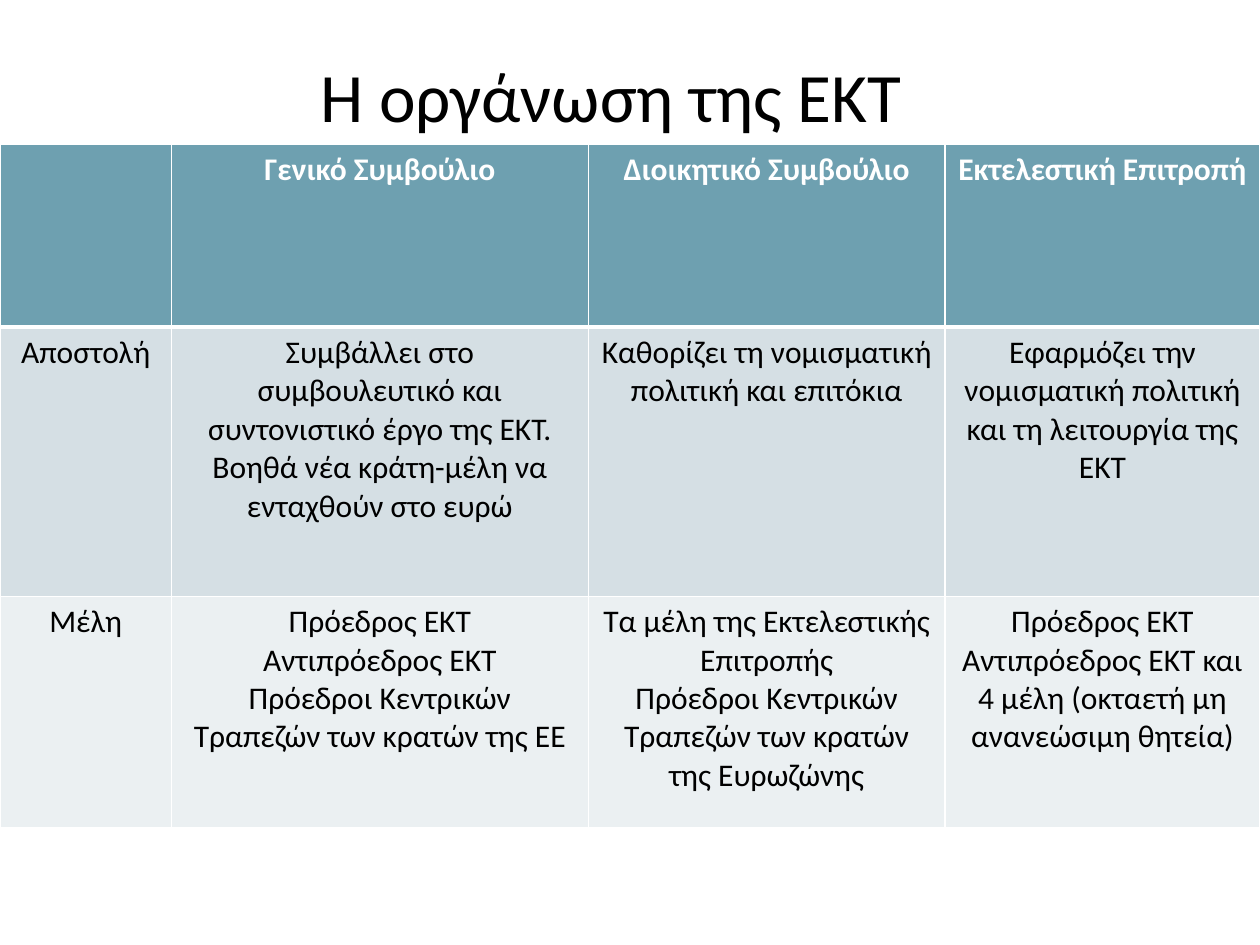
from dataclasses import dataclass
from typing import Any

from lxml import etree
from pptx import Presentation
from pptx.dml.color import RGBColor
from pptx.enum.text import MSO_ANCHOR, PP_ALIGN
from pptx.oxml.ns import qn
from pptx.util import Inches, Pt

CENTER = PP_ALIGN.CENTER
MIDDLE = MSO_ANCHOR.MIDDLE
TOP = MSO_ANCHOR.TOP

COLORS = {
    "ink": "000000",
    "white": "FFFFFF",
    "header": "6EA0B0",
    "mission": "D5DFE4",
    "members": "EBF0F2",
}
FORMATS = {
    "title": {"size": Pt(39.6), "bold": False, "color": "ink"},
    "header": {"size": Pt(18), "bold": True, "color": "white"},
    "body": {"size": Pt(18), "bold": False, "color": "ink"},
}
COLUMN_SHARES = [0.136, 0.331, 0.283, 0.25]
ROW_SHARES = [0.193, 0.285, 0.245]
ROW_FILLS = ["header", "mission", "members"]
THIN, THICK = 1, 3
ROWS = [
    ["", "Γενικό Συμβούλιο", "Διοικητικό Συμβούλιο", "Εκτελεστική Επιτροπή"],
    [
        "Αποστολή",
        "Συμβάλλει στο συμβουλευτικό και συντονιστικό έργο της ΕΚΤ. "
        "Βοηθά νέα κράτη-μέλη να ενταχθούν στο ευρώ",
        "Καθορίζει τη νομισματική πολιτική και επιτόκια",
        "Εφαρμόζει την νομισματική πολιτική και τη λειτουργία της ΕΚΤ",
    ],
    [
        "Μέλη",
        "Πρόεδρος ΕΚΤ\nΑντιπρόεδρος ΕΚΤ\n"
        "Πρόεδροι Κεντρικών Τραπεζών των κρατών της ΕΕ",
        "Τα μέλη της Εκτελεστικής Επιτροπής\n"
        "Πρόεδροι Κεντρικών Τραπεζών των κρατών της Ευρωζώνης",
        "Πρόεδρος ΕΚΤ\nΑντιπρόεδρος ΕΚΤ και\n"
        "4 μέλη (οκταετή μη ανανεώσιμη θητεία)",
    ],
]


@dataclass
class SlideBuilder:
    """Draws styled elements on a page, with lengths as shares of its size."""

    deck: Any
    page: Any
    font: str = "Calibri"

    def across(self, share):
        return round(self.deck.slide_width * share)

    def down(self, share):
        return round(self.deck.slide_height * share)

    def fill_text(self, frame, text, style):
        frame.text = text
        frame.word_wrap = True
        for para in frame.paragraphs:
            para.alignment = CENTER
            para.font.name = self.font
            for span in para.runs:
                span.font.name = self.font
                for name, value in FORMATS[style].items():
                    if name == "color":
                        span.font.color.rgb = RGBColor.from_string(COLORS[value])
                    else:
                        setattr(span.font, name, value)

    def title(self, text, left, top, width, height):
        box = self.page.shapes.add_textbox(
            self.across(left), self.down(top), self.across(width), self.down(height)
        )
        box.text_frame.vertical_anchor = MIDDLE
        self.fill_text(box.text_frame, text, "title")

    def borders(self, cell, widths):
        properties = cell._tc.get_or_add_tcPr()
        for side, width in widths.items():
            line = etree.SubElement(properties, qn(f"a:ln{side}"), w=str(Pt(width)))
            fill = etree.SubElement(line, qn("a:solidFill"))
            etree.SubElement(fill, qn("a:srgbClr"), val=COLORS["white"])

    def table(self, rows, left, top):
        frame = self.page.shapes.add_table(
            len(rows), len(rows[0]), self.across(left), self.down(top),
            self.across(sum(COLUMN_SHARES)), self.down(sum(ROW_SHARES)),
        )
        grid = frame.table
        for column, share in zip(grid.columns, COLUMN_SHARES):
            column.width = self.across(share)
        for index, (row, share, texts) in enumerate(zip(grid.rows, ROW_SHARES, rows)):
            row.height = self.down(share)
            widths = {
                "L": THIN,
                "R": THIN,
                "T": THICK if index == 1 else THIN,
                "B": THICK if index == 0 else THIN,
            }
            for cell, text in zip(row.cells, texts):
                self.borders(cell, widths)
                cell.fill.solid()
                cell.fill.fore_color.rgb = RGBColor.from_string(COLORS[ROW_FILLS[index]])
                cell.vertical_anchor = TOP
                self.fill_text(cell.text_frame, text, "body" if index else "header")


def main():
    deck = Presentation()
    deck.slide_width, deck.slide_height = Inches(10), Inches(7.5)
    page = deck.slides.add_slide(deck.slide_layouts[6])
    builder = SlideBuilder(deck, page)
    builder.title("Η οργάνωση της ΕΚΤ", 0.02, 0.048, 0.93, 0.105)
    builder.table(ROWS, 0, 0.153)
    deck.save("out.pptx")


if __name__ == "__main__":
    main()
